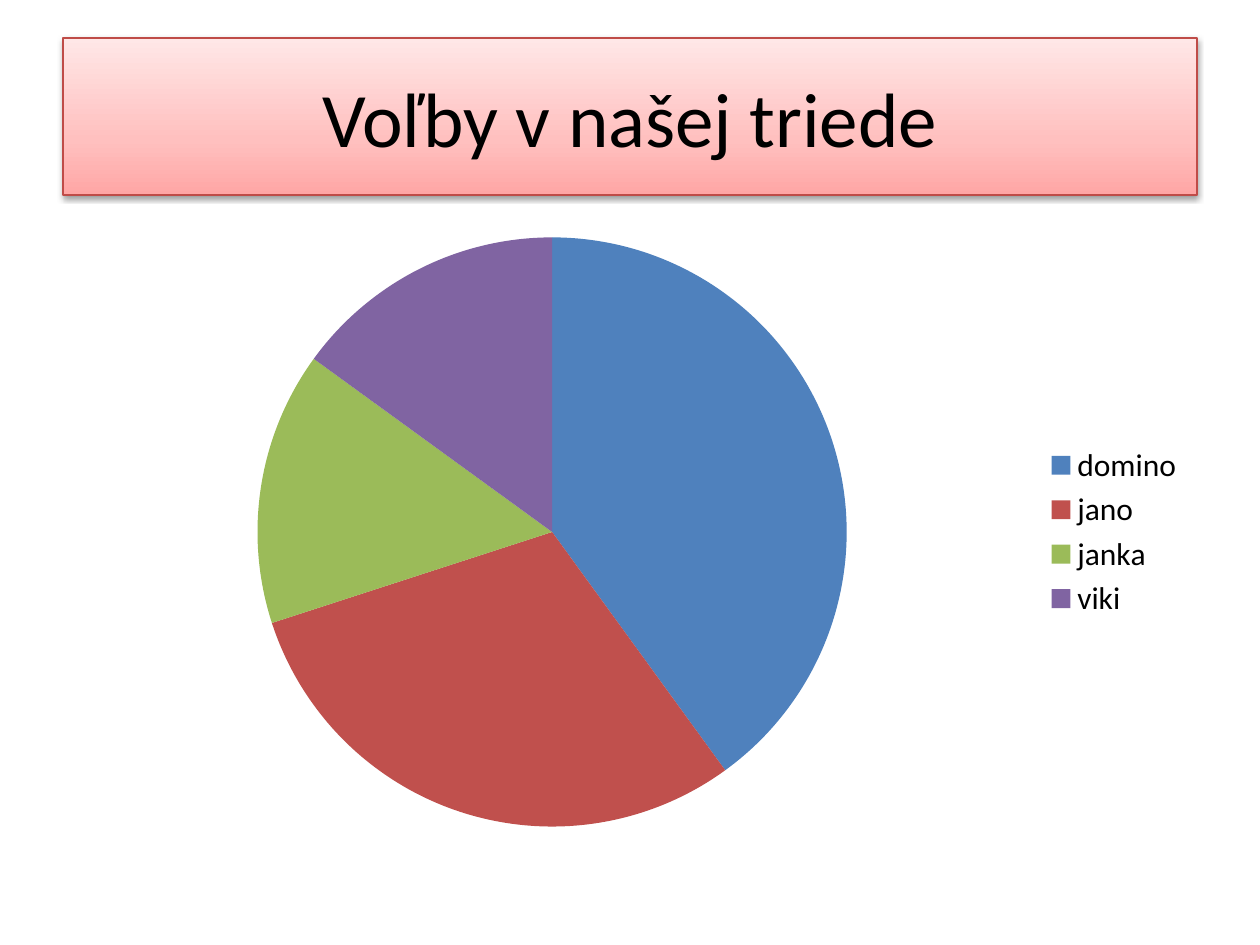
from copy import deepcopy

from lxml import etree
from pptx import Presentation
from pptx.chart.data import CategoryChartData
from pptx.dml.color import RGBColor
from pptx.enum.chart import XL_CHART_TYPE, XL_LEGEND_POSITION
from pptx.enum.shapes import MSO_SHAPE
from pptx.enum.text import MSO_ANCHOR, PP_ALIGN
from pptx.oxml.ns import qn
from pptx.util import Emu, Pt

PIE = XL_CHART_TYPE.PIE
LEGEND_RIGHT = XL_LEGEND_POSITION.RIGHT
RECTANGLE = MSO_SHAPE.RECTANGLE
MIDDLE = MSO_ANCHOR.MIDDLE
CENTER = PP_ALIGN.CENTER

PX_PER_INCH = 126
FONT = "Calibri"
BLACK = "000000"
BANNER_BORDER = "BF4C48"
BANNER_GRADIENT = [(0, "FFA6A5"), (0.35, "FFC0BF"), (1, "FFE7E7")]
VOTES = [
    ("domino", 40, "4F81BD"),
    ("jano", 30, "C0504D"),
    ("janka", 15, "9BBB59"),
    ("viki", 15, "8064A2"),
]


def px(length):
    return Emu(round(length * 914400 / PX_PER_INCH))


def color(value):
    return RGBColor.from_string(value)


def style_font(font, size):
    font.name = FONT
    font.size = Pt(size)
    font.color.rgb = color(BLACK)


def fill_gradient(shape, stops):
    """Fill from bottom to top with (position, colour) stops."""
    shape.fill.gradient()
    shape.fill.gradient_angle = 90
    stop_list = shape._element.spPr.find(qn("a:gradFill")).find(qn("a:gsLst"))
    while len(stop_list) < len(stops):
        stop_list.append(deepcopy(stop_list[0]))
    for stop, (position, value) in zip(shape.fill.gradient_stops, stops):
        stop.position = position
        stop.color.rgb = color(value)


def add_soft_shadow(shape):
    shape.shadow.inherit = False
    effects = shape._element.spPr.find(qn("a:effectLst"))
    shadow = etree.SubElement(effects, qn("a:outerShdw"), blurRad="40000",
                              dist="20000", dir="5400000", rotWithShape="0")
    shade = etree.SubElement(shadow, qn("a:srgbClr"), val=BLACK)
    etree.SubElement(shade, qn("a:alpha"), val="38000")


def add_title_banner(slide, left, top, width, height):
    banner = slide.shapes.add_shape(
        RECTANGLE, px(left), px(top), px(width), px(height))
    fill_gradient(banner, BANNER_GRADIENT)
    banner.line.color.rgb = color(BANNER_BORDER)
    banner.line.width = Pt(0.75)
    add_soft_shadow(banner)

    frame = banner.text_frame
    frame.text = "Voľby v našej triede"
    frame.word_wrap = True
    frame.vertical_anchor = MIDDLE
    heading = frame.paragraphs[0]
    heading.alignment = CENTER
    style_font(heading.runs[0].font, 44)


def add_votes_pie(slide, left, top, width, height):
    names, counts, slice_colors = zip(*VOTES)
    votes = CategoryChartData()
    votes.categories = names
    votes.add_series("Series 1", counts)
    chart = slide.shapes.add_chart(
        PIE, px(left), px(top), px(width), px(height), votes).chart
    chart.has_title = False
    style_font(chart.font, 18)
    chart.has_legend = True
    chart.legend.position = LEGEND_RIGHT
    chart.legend.include_in_layout = False

    pie = chart.plots[0]
    pie.vary_by_categories = True
    for index, value in enumerate(slice_colors):
        fill = pie.series[0].points[index].format.fill
        fill.solid()
        fill.fore_color.rgb = color(value)


def main():
    presentation = Presentation()
    presentation.slide_width = px(1260)
    presentation.slide_height = px(945)
    slide = presentation.slides.add_slide(presentation.slide_layouts[6])
    add_title_banner(slide, 63, 38, 1134, 157)
    add_votes_pie(slide, 63, 220, 1134, 624)
    presentation.save("out.pptx")


if __name__ == "__main__":
    main()
